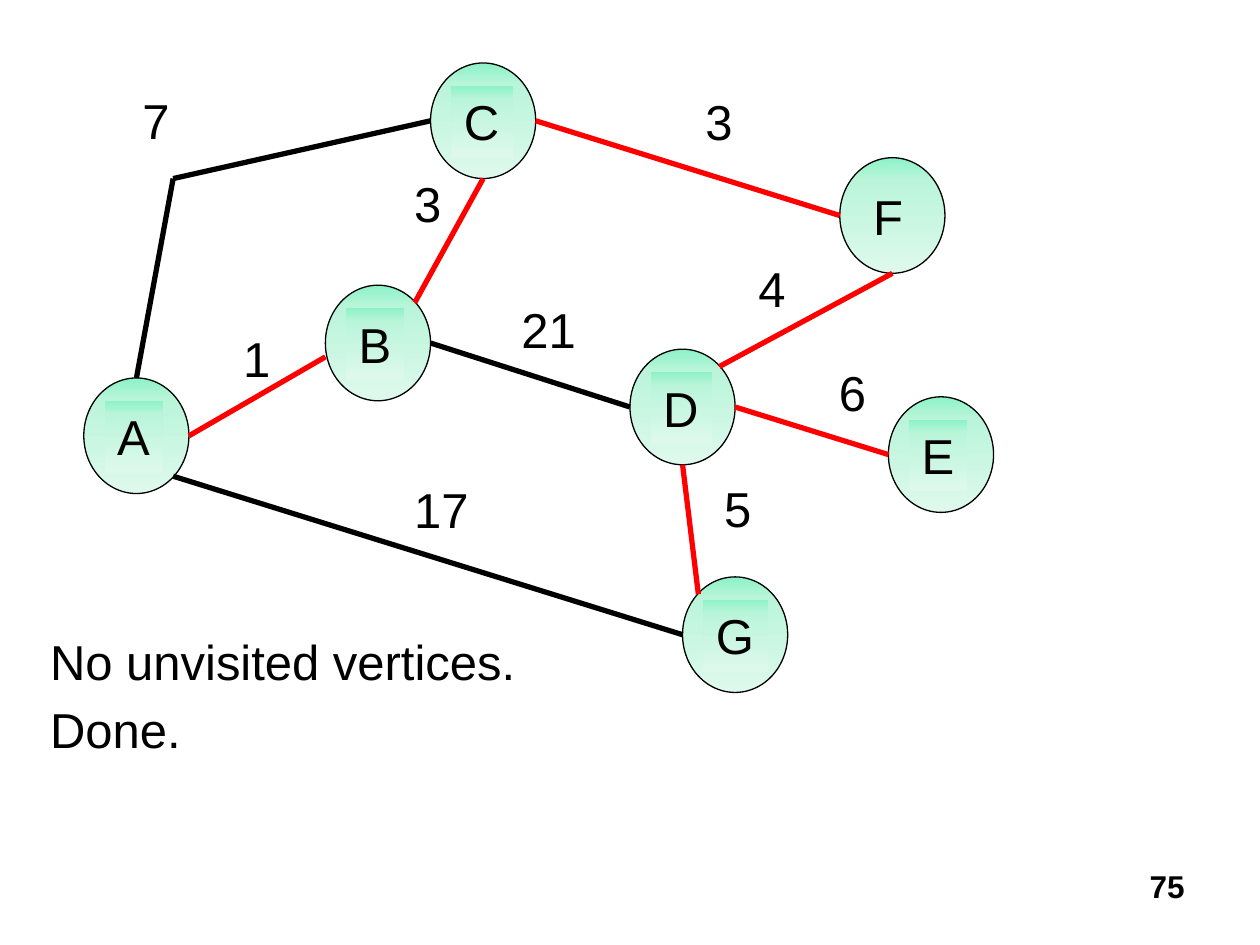
from copy import deepcopy

from lxml.etree import SubElement
from pptx import Presentation
from pptx.dml.color import RGBColor
from pptx.enum.shapes import MSO_CONNECTOR as Connector, MSO_SHAPE as Shape
from pptx.enum.text import MSO_ANCHOR as Anchor, MSO_AUTO_SIZE as AutoSize, PP_ALIGN as Align
from pptx.oxml.ns import qn
from pptx.util import Cm, Pt

BLACK = RGBColor(0x00, 0x00, 0x00)
RED = RGBColor(0xFF, 0x00, 0x00)
MINT_STOPS = [
    (0, RGBColor(0x8C, 0xF2, 0xC6)),
    (0.19, RGBColor(0xBA, 0xF5, 0xDA)),
    (1, RGBColor(0xDE, 0xF9, 0xEC)),
]

NODE_WIDTH, NODE_HEIGHT = 2.12, 2.33
LABEL_HEIGHT = 1.45
DIGIT_WIDTHS = {1: 1.07, 2: 1.63}

# name: left, top, width of the letter box (cm)
NODES = {
    "A": (1.69, 7.62, 1.17),
    "B": (6.56, 5.75, 1.17),
    "C": (8.68, 1.27, 1.24),
    "F": (16.93, 3.18, 1.12),
    "D": (12.7, 7.04, 1.24),
    "E": (17.91, 8, 1.17),
    "G": (13.76, 11.63, 1.3),
}

# Places on an oval as fractions of its width and height
SITES = {
    "top": (0.5, 0),
    "bottom": (0.5, 1),
    "left": (0, 0.5),
    "lower left": (0, 0.62),
    "right": (1, 0.5),
    "top left": (0.15, 0.15),
    "top right": (0.85, 0.15),
    "bottom right": (0.85, 0.85),
}

TREE_EDGES = [
    ("A", "right", "B", "lower left"),
    ("B", "top right", "C", "bottom"),
    ("C", "right", "F", "left"),
    ("F", "bottom", "D", "top right"),
    ("D", "right", "E", "left"),
    ("D", "bottom", "G", "top left"),
]
OTHER_EDGES = [
    ("B", "right", "D", "left"),
    ("A", "bottom right", "G", "left"),
]
BEND = (3.49, 3.6)  # corner of the edge from A to C

WEIGHTS = [
    ("1", 4.65, 6.5),
    ("3", 8.1, 3.38),
    ("3", 13.97, 1.73),
    ("21", 10.26, 5.92),
    ("4", 15.04, 5.08),
    ("6", 16.66, 7.19),
    ("17", 8.1, 9.55),
    ("5", 14.35, 9.53),
    ("7", 2.62, 1.7),
]


def set_all(target, values):
    for name, value in values.items():
        setattr(target, name, value)


def fill_mint(shape):
    fill = shape.fill
    fill.gradient()
    stop_list = shape.element.spPr.find(qn("a:gradFill")).find(qn("a:gsLst"))
    stop_list.append(deepcopy(stop_list[-1]))
    for stop, (position, color) in zip(fill.gradient_stops, MINT_STOPS):
        stop.position = position
        stop.color.rgb = color
    fill.gradient_angle = 270


def write(box, lines, size=28, bold=False, align=Align.LEFT):
    for index, line in enumerate(lines):
        paras = box.text_frame
        para = paras.add_paragraph() if index else paras.paragraphs[0]
        para.alignment = align
        span = para.add_run()
        span.text = line
        set_all(span.font, {"name": "Arial", "size": Pt(size), "bold": bold})
        span.font.color.rgb = BLACK


def fit_label(box, lines):
    """Write lines in a box that hugs its text, each with 20% space before."""
    set_all(box.text_frame, {
        "word_wrap": False,
        "auto_size": AutoSize.SHAPE_TO_FIT_TEXT,
        "vertical_anchor": Anchor.TOP,
    })
    write(box, lines)
    for para in box.text_frame.paragraphs:
        before = SubElement(para._p.get_or_add_pPr(), qn("a:spcBef"))
        SubElement(before, qn("a:spcPct")).set("val", "20000")


def add_label(shapes, lines, left, top, width, height=LABEL_HEIGHT):
    box = shapes.add_textbox(Cm(left), Cm(top), Cm(width), Cm(height))
    fit_label(box, lines)
    return box


def add_node(page, name):
    left, top, letter_width = NODES[name]
    group = page.shapes.add_group_shape()
    oval = group.shapes.add_shape(
        Shape.OVAL, Cm(left), Cm(top), Cm(NODE_WIDTH), Cm(NODE_HEIGHT))
    oval.shadow.inherit = False
    fill_mint(oval)
    oval.line.color.rgb = BLACK
    oval.line.width = Pt(0.75)
    letter = add_label(group.shapes, [name], left + 0.42, top + 0.46, letter_width)
    if name != "F":
        fill_mint(letter)


def site(name, place):
    left, top, _ = NODES[name]
    across, down = SITES[place]
    return left + across * NODE_WIDTH, top + down * NODE_HEIGHT


def add_edge(page, start, end, color):
    edge = page.shapes.add_connector(
        Connector.STRAIGHT, *(Cm(value) for value in (*start, *end)))
    edge.line.color.rgb = color
    edge.line.width = Pt(3)
    SubElement(edge.element.spPr, qn("a:effectLst"))


def add_page_number(page, number):
    box = page.shapes.add_textbox(Cm(18.85), Cm(17.35), Cm(5.28), Cm(1.27))
    box.text_frame.word_wrap = True
    write(box, [number], size=18, bold=True, align=Align.RIGHT)


def main():
    deck = Presentation()
    set_all(deck, {"slide_width": Cm(25.4), "slide_height": Cm(19.05)})
    page = deck.slides.add_slide(deck.slide_layouts[6])

    add_page_number(page, "75")
    for name in NODES:
        add_node(page, name)
    for edges, color in ((TREE_EDGES, RED), (OTHER_EDGES, BLACK)):
        for start, start_place, end, end_place in edges:
            add_edge(page, site(start, start_place), site(end, end_place), color)
    add_edge(page, site("A", "top"), BEND, BLACK)
    add_edge(page, BEND, site("C", "left"), BLACK)
    for weight, left, top in WEIGHTS:
        add_label(page.shapes, [weight], left, top, DIGIT_WIDTHS[len(weight)])
    add_label(page.shapes, ["No unvisited vertices.", "Done."], 0.76, 12.6, 10, 2.9)

    deck.save("out.pptx")


if __name__ == "__main__":
    main()
